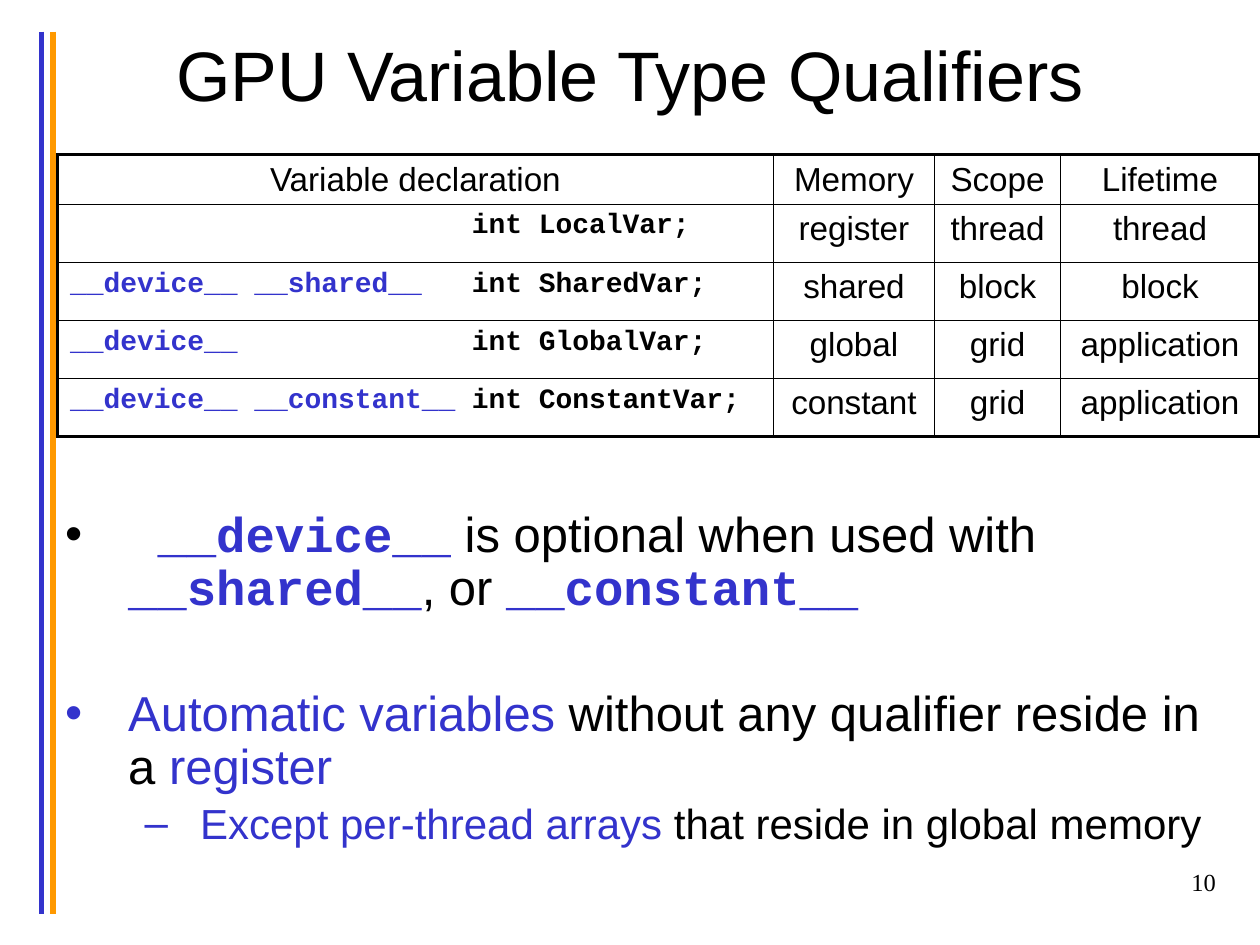
import pptx
import pptx.dml.color
import pptx.enum.shapes
import pptx.enum.text
import pptx.oxml
import pptx.oxml.ns
import pptx.util
from pptx.util import Cm, Pt

RGBColor = pptx.dml.color.RGBColor
PP_ALIGN = pptx.enum.text.PP_ALIGN
ANCHOR = pptx.enum.text.MSO_ANCHOR
qn = pptx.oxml.ns.qn

BLACK = RGBColor(0, 0, 0)
BLUE = RGBColor(0x33, 0x33, 0xCC)
ORANGE = RGBColor(0xFF, 0x99, 0x00)
SANS, MONO, SERIF = "Arial", "Courier New", "Times New Roman"

HEADERS = ["Variable declaration", "Memory", "Scope", "Lifetime"]
VARIABLES = [  # qualifiers, declaration, memory, scope, lifetime
    ("", "int LocalVar;", "register", "thread", "thread"),
    ("__device__ __shared__", "int SharedVar;", "shared", "block", "block"),
    ("__device__", "int GlobalVar;", "global", "grid", "application"),
    ("__device__ __constant__", "int ConstantVar;", "constant", "grid", "application"),
]
COL_WIDTHS = [14.43, 3.25, 2.54, 4.01]
HEADER_HEIGHT, ROW_HEIGHT = 0.99, 1.17

# level, bullet, left margin, hanging indent, space before, size, runs
NOTES = [
    (0, "•", 1.27, 1.27, 5.6, 28,
     [(" ", MONO, BLACK), ("__device__", MONO, BLUE),
      (" is optional when used with ", SANS, BLACK), ("__shared__", MONO, BLUE),
      (", or ", SANS, BLACK), ("__constant__", MONO, BLUE)]),
    (0, "•", 1.27, 1.27, 41.5, 28,
     [("Automatic variables", SANS, BLUE),
      (" without any qualifier reside in a ", SANS, BLACK), ("register", SANS, BLUE)]),
    (1, "–", 2.72, 1.12, 4.8, 24,
     [("Except per-thread arrays", SANS, BLUE),
      (" that reside in global memory", SANS, BLACK)]),
]


def add_run(p, text, size, font, color=BLACK):
    r = p.add_run()
    r.text = text
    r.font.size = Pt(size)
    r.font.name = font
    r.font.bold = font == MONO
    r.font.color.rgb = color


def place(shape, left, top, width, height):
    shape.left, shape.top = Cm(left), Cm(top)
    shape.width, shape.height = Cm(width), Cm(height)


def add_side_rules(s, left, top, width, height):
    for x, color in ((left, BLUE), (left + width, ORANGE)):
        line = s.shapes.add_connector(pptx.enum.shapes.MSO_CONNECTOR.STRAIGHT,
                                      Cm(x), Cm(top), Cm(x), Cm(top + height))
        line.line.color.rgb = color
        line.line.width = Pt(3)
        # An empty effect list removes the shadow
        spPr = line._element.spPr
        spPr.append(spPr.makeelement(qn("a:effectLst"), {}))


def add_title(s, *box):
    sp = s.shapes.title
    place(sp, *box)
    tf = sp.text_frame
    tf.vertical_anchor = ANCHOR.MIDDLE
    tf.auto_size = pptx.enum.text.MSO_AUTO_SIZE.NONE
    p = tf.paragraphs[0]
    p.alignment = PP_ALIGN.CENTER
    add_run(p, "GPU Variable Type Qualifiers", 40, SANS)


def set_bullet(p, char, margin, hanging):
    pPr = p._p.get_or_add_pPr()
    pPr.set("marL", str(Cm(margin)))
    pPr.set("indent", str(-Cm(hanging)))
    pPr.append(pPr.makeelement(qn("a:buChar"), {"char": char}))


def add_notes(s, *box):
    sp = s.placeholders[1]
    place(sp, *box)
    tf = sp.text_frame
    tf.auto_size = pptx.enum.text.MSO_AUTO_SIZE.NONE
    for i, (level, char, margin, hanging, before, size, runs) in enumerate(NOTES):
        p = tf.add_paragraph() if i else tf.paragraphs[0]
        p.level = level
        p.line_spacing = 0.9
        p.space_before = Pt(before)
        set_bullet(p, char, margin, hanging)
        for text, font, color in runs:
            add_run(p, text, size, font, color)


def set_borders(cell, widths):
    tcPr = cell._tc.get_or_add_tcPr()
    for side, width in zip("LRTB", widths):
        ln = tcPr.makeelement(qn(f"a:ln{side}"), {"w": str(Pt(width))})
        fill = ln.makeelement(qn("a:solidFill"), {})
        fill.append(fill.makeelement(qn("a:srgbClr"), {"val": str(BLACK)}))
        ln.append(fill)
        tcPr.append(ln)


def add_declaration(p, qualifiers, declaration):
    # A tab stop lines up the declarations after the qualifiers
    pPr = p._p.get_or_add_pPr()
    tabs = pPr.makeelement(qn("a:tabLst"), {})
    tabs.append(tabs.makeelement(qn("a:tab"), {"pos": str(Cm(8.1)), "algn": "l"}))
    pPr.append(tabs)
    if qualifiers:
        add_run(p, qualifiers, 16, MONO, BLUE)
    add_run(p, "\t" + declaration, 16, MONO)


def add_variable_table(s, left, top):
    n_rows, n_cols = len(VARIABLES) + 1, len(HEADERS)
    heights = [HEADER_HEIGHT] + [ROW_HEIGHT] * len(VARIABLES)
    table = s.shapes.add_table(n_rows, n_cols, Cm(left), Cm(top),
                               Cm(sum(COL_WIDTHS)), Cm(sum(heights))).table
    table.first_row = table.horz_banding = False
    for col, width in zip(table.columns, COL_WIDTHS):
        col.width = Cm(width)
    for row, height in zip(table.rows, heights):
        row.height = Cm(height)

    for i in range(n_rows):
        for j in range(n_cols):
            cell = table.cell(i, j)
            # Thick frame outside, thin rules inside
            outer = (j == 0, j == n_cols - 1, i == 0, i == n_rows - 1)
            set_borders(cell, [2.25 if edge else 1 for edge in outer])
            cell.fill.background()
            p = cell.text_frame.paragraphs[0]
            if i and j == 0:
                add_declaration(p, *VARIABLES[i - 1][:2])
            else:
                p.alignment = PP_ALIGN.CENTER
                add_run(p, VARIABLES[i - 1][j + 1] if i else HEADERS[j], 19, SANS)


def add_page_number(s, *box):
    tf = s.shapes.add_textbox(*map(Cm, box)).text_frame
    tf.word_wrap = True
    p = tf.paragraphs[0]
    p.alignment = PP_ALIGN.RIGHT
    add_run(p, "10", 14, SERIF)


def main():
    prs = pptx.Presentation()
    prs.slide_width, prs.slide_height = Cm(25.4), Cm(19.05)
    s = prs.slides.add_slide(prs.slide_layouts[1])
    add_side_rules(s, 0.84, 0.64, 0.23, 17.78)
    add_title(s, 1.37, 0, 22.66, 2.97)
    add_variable_table(s, 1.16, 3.12)
    add_notes(s, 1.06, 10.16, 24.03, 8.43)
    add_page_number(s, 19.48, 17.35, 5.28, 1.27)
    prs.save("out.pptx")


if __name__ == "__main__":
    main()
